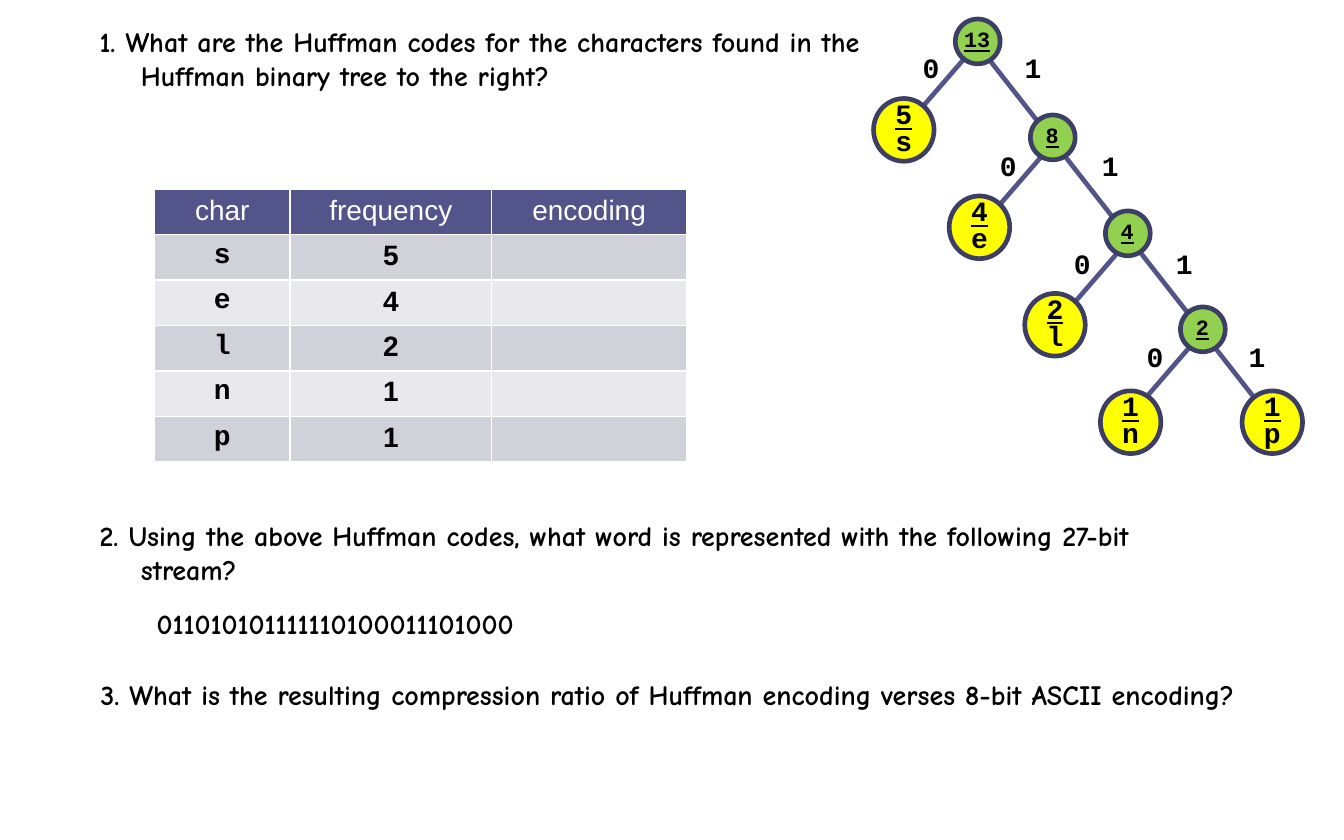
from pptx import Presentation
from pptx.dml.color import RGBColor
from pptx.enum.shapes import MSO_CONNECTOR as Link, MSO_SHAPE as Form
from pptx.enum.text import MSO_AUTO_SIZE as Fit, PP_ALIGN as Align
from pptx.oxml.ns import qn
from pptx.util import Inches, Pt
from lxml.etree import SubElement

INK, WHITE, BLUE, EDGE = "000000", "FFFFFF", "53548A", "3D3E66"
YELLOW, GREEN, DARK, LIGHT = "FFFF00", "92D050", "D1D1DA", "E9E9ED"
PROSE = {"name": "Comic Neue", "size": Pt(18), "bold": True}
CODE = {"name": "Courier New", "size": Pt(18), "bold": True}
SMALL = CODE | {"size": Pt(14), "underline": True}
HEAD = {"name": "Arial", "size": Pt(18), "bold": False}
COUNT = HEAD | {"bold": True}

CHARS = [("s", "5"), ("e", "4"), ("l", "2"), ("n", "1"), ("p", "1")]
SUMS = ["13", "8", "4", "2"]
EDGES = [(8.76, 0.35), (9.47, 1.2), (10.08, 2.14), (10.76, 2.94)]
BITS = [(8.14, 0.4), (8.83, 1.28), (9.49, 2.15), (10.14, 2.98)]
TASKS = [
    (0.79, 0.17, 7.11, "1. What are the Huffman codes for the characters found in the "
     "Huffman binary tree to the right?"),
    (0.79, 4.58, 10.15, "2. Using the above Huffman codes, what word is represented with "
     "the following 27-bit stream?"),
    (0.8, 6, 11.38, "3. What is the resulting compression ratio of Huffman encoding "
     "verses 8-bit ASCII encoding?"),
]


def tint(code):
    """Turn a hex string into a colour."""
    return RGBColor.from_string(code)


def write(para, text, style, color=INK):
    """Add a styled run to a paragraph."""
    run = para.add_run()
    run.text = text
    for key, value in style.items():
        setattr(run.font, key, value)
    run.font.color.rgb = tint(color)


def add_text(slide, left, top, width, height, lines, align=Align.CENTER):
    """Add a text box of (text, style) lines and return its paragraphs."""
    box = slide.shapes.add_textbox(*map(Inches, (left, top, width, height)))
    frame = box.text_frame
    frame.word_wrap = True
    frame.auto_size = Fit.SHAPE_TO_FIT_TEXT
    for spot, (text, style) in enumerate(lines):
        para = frame.add_paragraph() if spot else frame.paragraphs[0]
        para.alignment = align
        write(para, text, style)
    return frame.paragraphs


def add_task(slide, left, top, width, text):
    """Add a question with a hanging indent."""
    para = add_text(slide, left, top, width, 0.71, [(text, PROSE)], Align.LEFT)[0]
    props = para._p.get_or_add_pPr()
    props.set("marL", str(Inches(0.37)))
    props.set("indent", str(Inches(-0.37)))


def add_edge(slide, x, y, dx, dy):
    """Draw a tree edge."""
    line = slide.shapes.add_connector(
        Link.STRAIGHT, *map(Inches, (x, y, x + dx, y + dy)))
    line.line.color.rgb = tint(BLUE)
    line.line.width = Pt(3)
    SubElement(line._element.spPr, qn("a:effectLst"))


def add_disc(slide, left, top, width, height, fill):
    """Draw the disc of a tree node."""
    disc = slide.shapes.add_shape(Form.OVAL, *map(Inches, (left, top, width, height)))
    disc.shadow.inherit = False
    disc.fill.solid()
    disc.fill.fore_color.rgb = tint(fill)
    disc.line.color.rgb = tint(EDGE)
    disc.line.width = Pt(3)


def add_leaf(slide, left, top, char, count):
    """Add a leaf with its count over its character."""
    add_disc(slide, left, top, 0.54, 0.56, YELLOW)
    lines = [(count, CODE | {"underline": True}), (char, CODE)]
    add_text(slide, left + 0.09, top - 0.07, 0.36, 0.65, lines)[1].line_spacing = 0.8


def add_node(slide, left, top, total):
    """Add an inner node with its total."""
    add_disc(slide, left, top, 0.4, 0.4, GREEN)
    add_text(slide, left - 0.05, top + 0.01, 0.49, 0.34, [(total, SMALL)])


def add_tree(slide):
    """Build the Huffman tree."""
    for x, y in EDGES:
        add_edge(slide, x, y, -0.78, 0.9)
    add_edge(slide, 8.69, 0.35, 2.68, 3.42)
    for level, (char, count) in enumerate(CHARS[:-1]):
        add_leaf(slide, 7.8 + 0.675 * level, 0.88 + 0.87 * level, char, count)
    add_leaf(slide, 11.09, 3.49, *CHARS[-1])
    for level, total in enumerate(SUMS):
        add_node(slide, 8.53 + 0.67 * level, 0.17 + 0.857 * level, total)
    for x, y in BITS:
        add_text(slide, x, y, 0.25, 0.4, [("0", CODE)])
        add_text(slide, x + 0.91, y, 0.25, 0.4, [("1", CODE)])


def add_grid(slide):
    """Add the table of characters, frequencies and blank encodings."""
    rows = [("char", "frequency", "encoding")] + [(*pair, "") for pair in CHARS]
    table = slide.shapes.add_table(
        len(rows), 3, *map(Inches, (1.38, 1.69, 4.75, 2.43))).table
    for col, width in zip(table.columns, (1.21, 1.8, 1.74)):
        col.width = Inches(width)
    for r, row in enumerate(rows):
        shade = (DARK if r % 2 else LIGHT) if r else BLUE
        for c, text in enumerate(row):
            cell = table.cell(r, c)
            cell.fill.solid()
            cell.fill.fore_color.rgb = tint(shade)
            para = cell.text_frame.paragraphs[0]
            para.alignment = Align.CENTER
            if text:
                style = (COUNT if c else CODE) if r else HEAD
                write(para, text, style, INK if r else WHITE)


def main():
    """Build and save the slide."""
    deck = Presentation()
    deck.slide_width, deck.slide_height = Inches(12), Inches(7.5)
    slide = deck.slides.add_slide(deck.slide_layouts[6])
    add_grid(slide)
    add_text(slide, 1.3, 5.37, 6.21, 0.4,
             [("011010101111110100011101000", PROSE)], Align.LEFT)
    add_tree(slide)
    for task in TASKS:
        add_task(slide, *task)
    deck.save("out.pptx")


if __name__ == "__main__":
    main()
